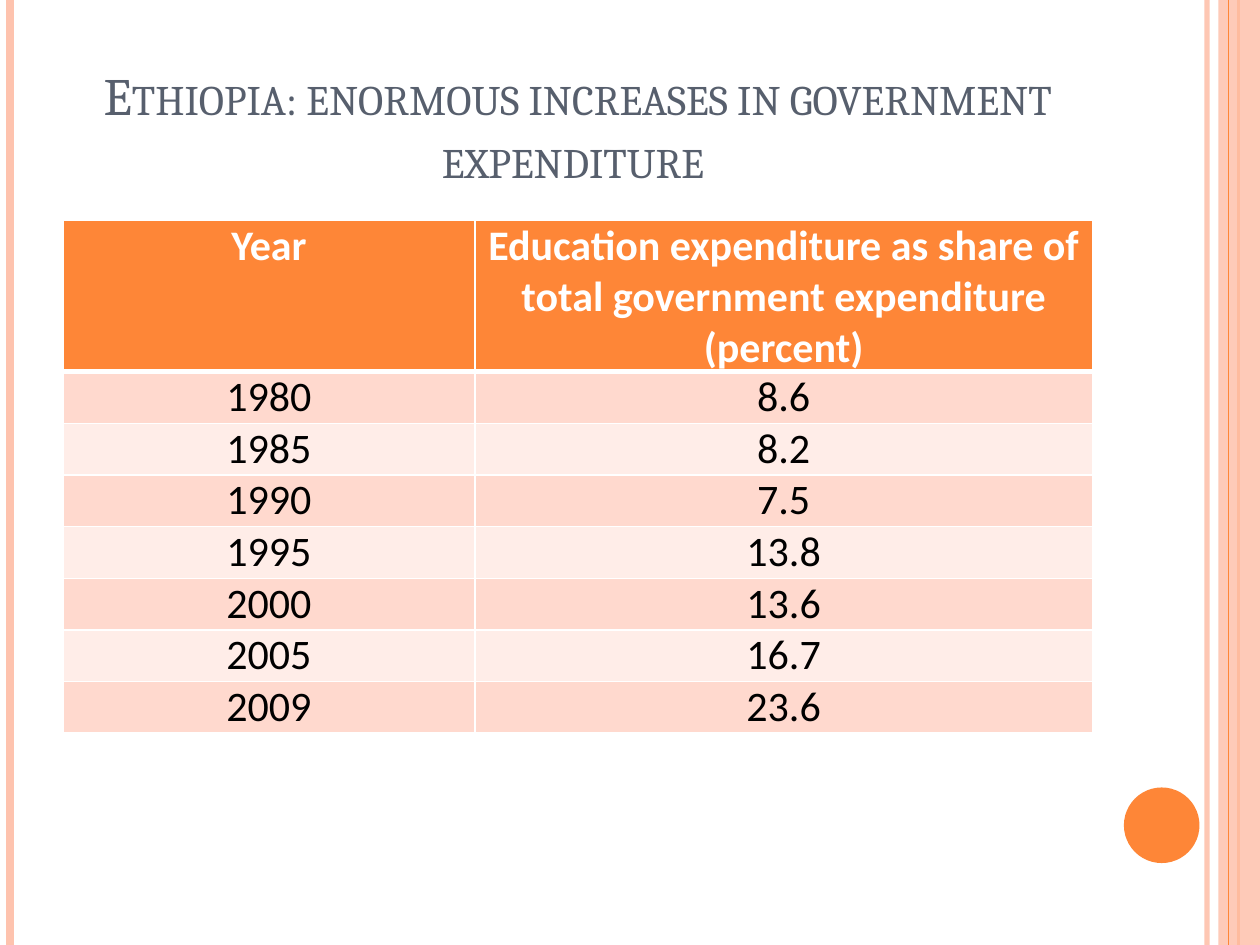
from dataclasses import dataclass

from lxml import etree
from pptx import Presentation
from pptx.dml.color import RGBColor
from pptx.enum.shapes import MSO_CONNECTOR, MSO_SHAPE
from pptx.enum.text import MSO_ANCHOR, PP_ALIGN
from pptx.oxml.ns import qn
from pptx.util import Inches, Pt

LINE = MSO_CONNECTOR.STRAIGHT
RECT, OVAL = MSO_SHAPE.RECTANGLE, MSO_SHAPE.OVAL
CENTER, BOTTOM = PP_ALIGN.CENTER, MSO_ANCHOR.BOTTOM


@dataclass(frozen=True)
class Theme:
    """Colours, fonts and type sizes of the slide."""
    accent: str = "FE8637"
    pale: str = "FEC3AE"
    slate: str = "575F6D"
    white: str = "FFFFFF"
    black: str = "000000"
    bands: tuple = ("FFD9CE", "FFEDE8")
    head: str = "Cambria"
    body: str = "Calibri"
    big: int = 30
    mid: int = 24


THEME = Theme()
TITLE = "Ethiopia: enormous increases in government expenditure "
ROWS = [
    ("Year", "Education expenditure as share of total government expenditure (percent)"),
    ("1980", "8.6"),
    ("1985", "8.2"),
    ("1990", "7.5"),
    ("1995", "13.8"),
    ("2000", "13.6"),
    ("2005", "16.7"),
    ("2009", "23.6"),
]


def assign(item, values):
    """Set each attribute named in values on item."""
    for name, value in values.items():
        setattr(item, name, value)


def write(frame, text, color, **font):
    """Put one centred run of text in a frame and return the run."""
    para = frame.paragraphs[0]
    para.alignment = CENTER
    run = para.add_run()
    run.text = text
    assign(run.font, font)
    run.font.color.rgb = RGBColor.from_string(color)
    return run


def fade(color, percent):
    """Set the opacity of a solid colour element."""
    etree.SubElement(color, qn("a:alpha"), val=str(percent * 1000))


def add_rule(slide, box, shift, color, width, alpha=None):
    """Draw a full-height rule at an offset from the left of the box."""
    left, top, _, height = box
    x = Inches(left + shift)
    rule = slide.shapes.add_connector(LINE, x, Inches(top), x, Inches(top + height))
    rule.line.color.rgb = RGBColor.from_string(color)
    rule.line.width = Pt(width)
    props = rule._element.spPr
    etree.SubElement(props, qn("a:effectLst"))
    if alpha:
        fade(props.find(".//" + qn("a:srgbClr")), alpha)


def add_block(slide, kind, box, color, alpha=None):
    """Draw a plain filled shape in the box."""
    block = slide.shapes.add_shape(kind, *map(Inches, box))
    block.shadow.inherit = False
    block.fill.solid()
    block.fill.fore_color.rgb = RGBColor.from_string(color)
    block.line.fill.background()
    if alpha:
        fade(block._element.spPr.find(".//" + qn("a:srgbClr")), alpha)


def add_frame(slide, box):
    """Draw the side rules, the right band and the dot."""
    left, top, width, height = box
    edge = left + width
    add_rule(slide, box, width - 0.42, THEME.pale, 3, 93)
    add_rule(slide, box, 0.08, THEME.pale, 4.5)
    add_rule(slide, box, width - 0.17, THEME.accent, 1.5)
    add_block(slide, RECT, (edge - 0.33, top, 0.33, height), THEME.pale, 87)
    add_rule(slide, box, width - 0.25, THEME.accent, 0.75)
    add_block(slide, OVAL, (edge - 1.08, top + height - 1.25, 0.6, 0.6), THEME.accent)


def add_title(slide, box):
    """Write the small-caps title at the bottom of the box."""
    frame = slide.shapes.add_textbox(*map(Inches, box)).text_frame
    assign(frame, {"word_wrap": True, "vertical_anchor": BOTTOM})
    run = write(frame, TITLE, THEME.slate, name=THEME.head, size=Pt(THEME.big))
    run.font._element.set("cap", "small")


def add_edges(cell, widths):
    """Give a cell white borders of the given widths by side."""
    props = cell._tc.get_or_add_tcPr()
    for side, width in widths.items():
        edge = etree.SubElement(props, qn("a:ln" + side), w=str(Pt(width)))
        fill = etree.SubElement(edge, qn("a:solidFill"))
        etree.SubElement(fill, qn("a:srgbClr"), val=THEME.white)


def add_grid(slide, box):
    """Build the banded expenditure table in the box."""
    table = slide.shapes.add_table(len(ROWS), 2, *map(Inches, box)).table
    for col, share in zip(table.columns, (0.4, 0.6)):
        col.width = Inches(round(box[2] * share, 2))
    inset = {"margin_left": Inches(0.07), "margin_right": Inches(0.07),
             "margin_top": 0, "margin_bottom": 0}
    for i, texts in enumerate(ROWS):
        table.rows[i].height = Inches(0.41)
        top = i == 0
        for j, text in enumerate(texts):
            cell = table.cell(i, j)
            assign(cell, inset)
            add_edges(cell, {"L": 1, "R": 1, "T": 3 if i == 1 else 1, "B": 3 if top else 1})
            cell.fill.solid()
            shade = THEME.accent if top else THEME.bands[(i - 1) % 2]
            cell.fill.fore_color.rgb = RGBColor.from_string(shade)
            write(cell.text_frame, text, THEME.white if top else THEME.black,
                  name=THEME.body, size=Pt(THEME.mid), bold=top)


def main():
    """Build and save the slide."""
    deck = Presentation()
    assign(deck, {"slide_width": Inches(10), "slide_height": Inches(7.5)})
    slide = deck.slides.add_slide(deck.slide_layouts[6])
    add_frame(slide, (0, 0, 10, 7.5))
    add_title(slide, (0.5, 0.3, 8.17, 1.25))
    add_grid(slide, (0.5, 1.75, 8.17, 3.28))
    deck.save("out.pptx")


if __name__ == "__main__":
    main()
